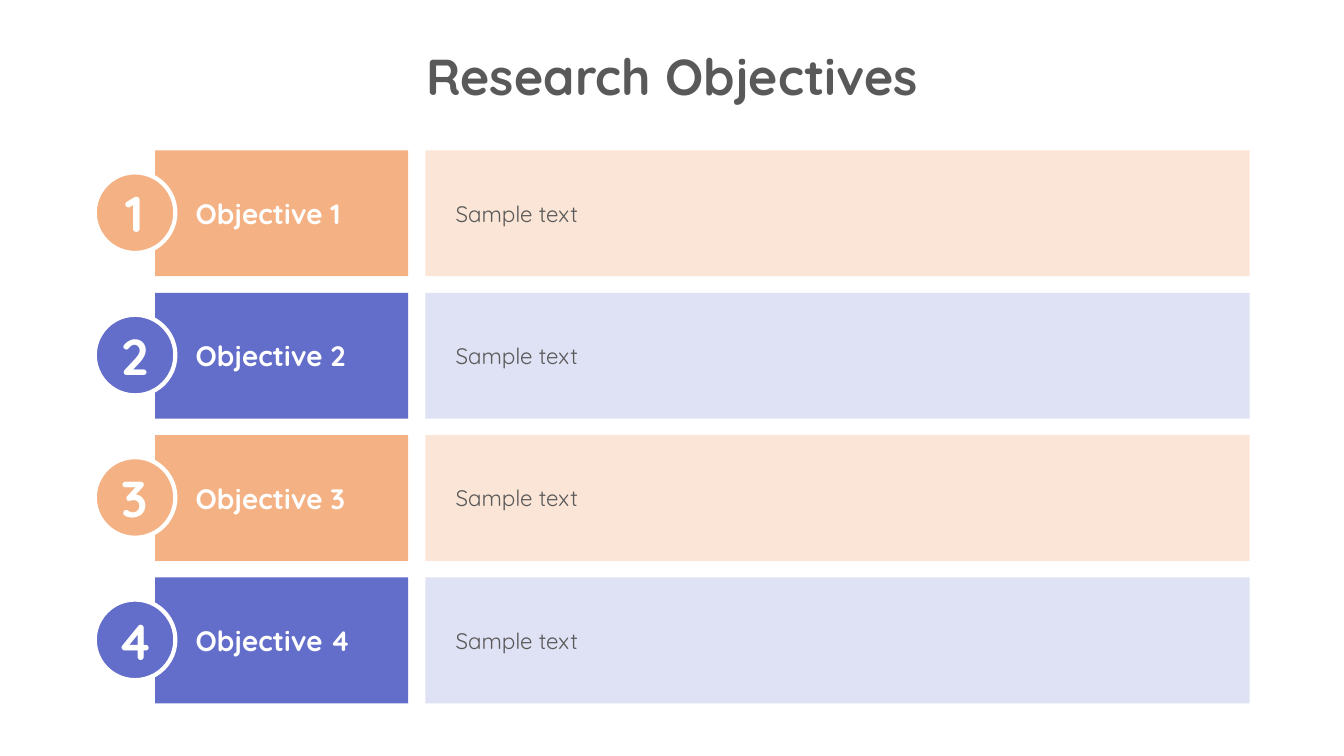
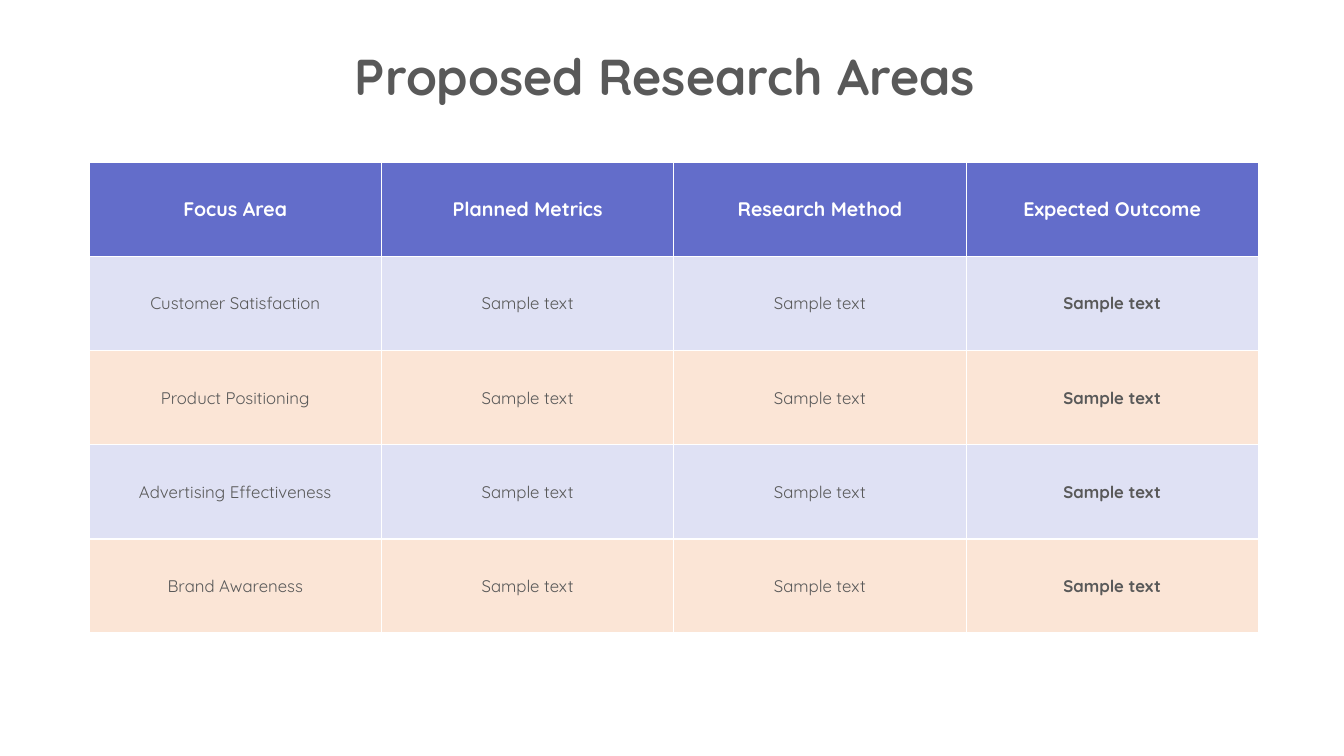
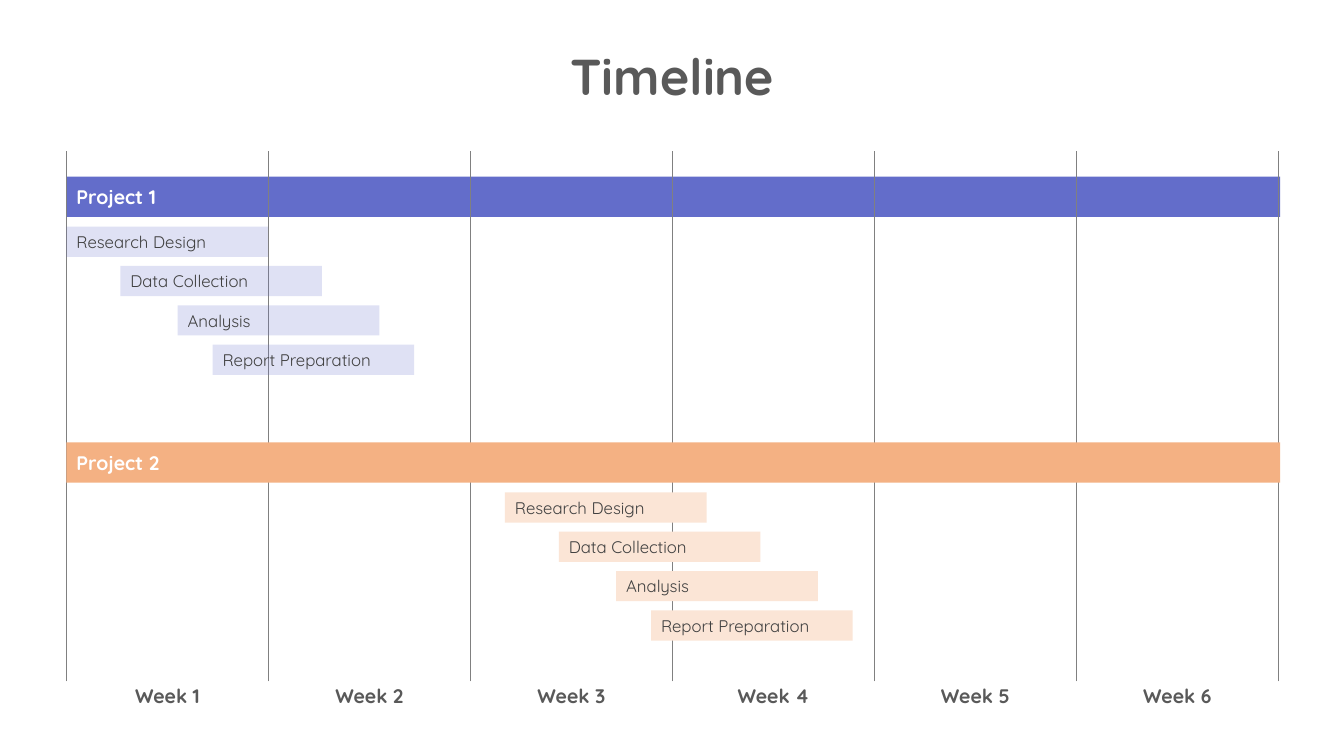
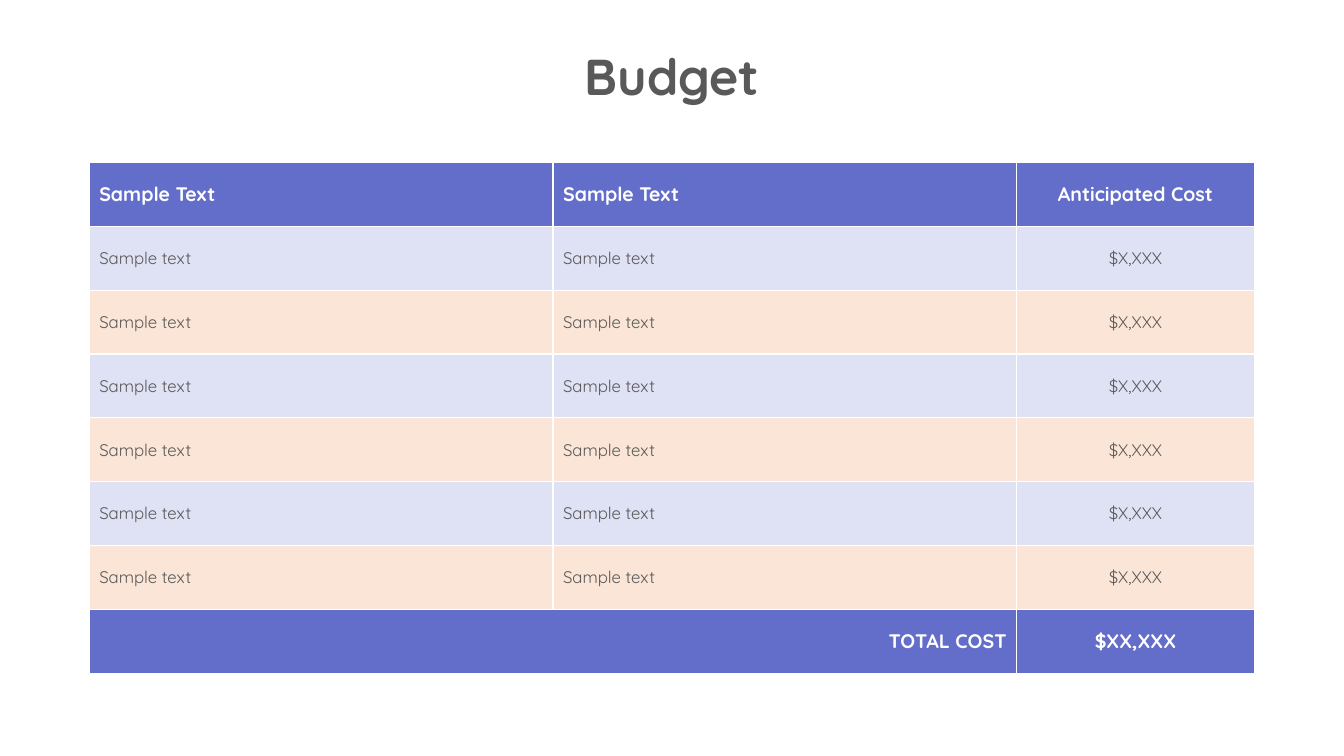
from dataclasses import dataclass

from lxml.etree import SubElement
from pptx import Presentation
from pptx.dml.color import RGBColor
from pptx.enum.shapes import MSO_CONNECTOR as Conn, MSO_SHAPE as Shape
from pptx.enum.text import MSO_ANCHOR as Anchor, MSO_AUTO_SIZE as AutoSize, PP_ALIGN as Align
from pptx.oxml.ns import qn
from pptx.util import Pt


@dataclass(frozen=True)
class Tone:
    rgb: str
    alpha: int = 100  # opacity in percent


@dataclass(frozen=True)
class Box:
    x: float
    y: float
    w: float
    h: float

    def place(self):
        return Pt(self.x), Pt(self.y), Pt(self.w), Pt(self.h)


@dataclass(frozen=True)
class Theme:
    font: str = "Quicksand"
    blue: Tone = Tone("636DCA")
    blue_tint: Tone = Tone("636DCA", 20)
    orange: Tone = Tone("F4B183")
    orange_tint: Tone = Tone("FBE5D6")
    white: str = "FFFFFF"
    text: str = "595959"
    task_text: str = "404040"
    rule: str = "808080"
    title_size: int = 36
    label_size: int = 20
    body_size: int = 16
    head_size: int = 14
    small_size: int = 12


T = Theme()
TITLE_BOX = Box(101.5, 28.8, 757.4, 51.1)


# Shared helpers
def rgb(value):
    return RGBColor.from_string(value)


def paint(fill, element, tone):
    """Fill a shape or cell; element is the XML that holds the fill."""
    fill.solid()
    fill.fore_color.rgb = rgb(tone.rgb)
    if tone.alpha < 100:
        clr = element.find(qn("a:solidFill")).find(qn("a:srgbClr"))
        SubElement(clr, qn("a:alpha"), val=str(tone.alpha * 1000))


def write(tf, text, size, color, bold=False, align=Align.LEFT):
    p = tf.paragraphs[0]
    p.alignment = align
    r = p.add_run()
    r.text = text
    r.font.name = T.font
    r.font.size = Pt(size)
    r.font.bold = bold
    r.font.color.rgb = rgb(color)


def add_block(slide, kind, box, tone, margins=(7.2, 3.6)):
    """Add a filled shape with no outline and return it."""
    sp = slide.shapes.add_shape(kind, *box.place())
    sp.shadow.inherit = False
    paint(sp.fill, sp.element.spPr, tone)
    sp.line.fill.background()
    tf = sp.text_frame
    tf.word_wrap = True
    tf.vertical_anchor = Anchor.MIDDLE
    tf.margin_left, tf.margin_right = Pt(margins[0]), Pt(margins[-1])
    tf.margin_top = tf.margin_bottom = Pt(3.6)
    return sp


def add_titled_slide(prs, title):
    slide = prs.slides.add_slide(prs.slide_layouts[5])
    sp = slide.shapes.title
    sp.left, sp.top, sp.width, sp.height = TITLE_BOX.place()
    tf = sp.text_frame
    tf.auto_size = AutoSize.NONE
    tf.word_wrap = True
    tf.vertical_anchor = Anchor.TOP
    write(tf, title, T.title_size, T.text, True, Align.CENTER)
    return slide


# Objectives
def add_objective(slide, box, number, tone, tint):
    """One row: label, description and a numbered badge over the label's edge."""
    label_x, label_w, gap, badge_d = 43.2, 180.7, 12.2, 57.6
    label = Box(box.x + label_x, box.y, label_w, box.h)
    body_x = label.x + label.w + gap
    body = Box(body_x, box.y, box.x + box.w - body_x, box.h)
    badge = Box(box.x, box.y + (box.h - badge_d) / 2 - 0.4, badge_d, badge_d)

    sp = add_block(slide, Shape.RECTANGLE, label, tone, (28.8, 7.2))
    write(sp.text_frame, f"Objective {number}", T.label_size, T.white, True)
    sp = add_block(slide, Shape.RECTANGLE, body, tint, (21.6, 21.6))
    write(sp.text_frame, "Sample text", T.body_size, T.text)
    sp = add_block(slide, Shape.OVAL, badge, tone, (0, 0))
    sp.line.color.rgb = rgb(T.white)
    sp.line.width = Pt(3)
    write(sp.text_frame, str(number), T.title_size, T.white, True, Align.CENTER)


def add_objectives(slide, box, count=4, row_h=89.9):
    tones = [(T.orange, T.orange_tint), (T.blue, T.blue_tint)]
    pitch = (box.h - row_h) / (count - 1)
    for i in range(count):
        row = Box(box.x, box.y + i * pitch, box.w, row_h)
        add_objective(slide, row, i + 1, *tones[i % 2])


# Tables
def set_borders(cell):
    tc_pr = cell._tc.get_or_add_tcPr()
    for i, side in enumerate(("lnL", "lnR", "lnT", "lnB")):
        ln = SubElement(tc_pr, qn(f"a:{side}"), w=str(Pt(1)))
        SubElement(SubElement(ln, qn("a:solidFill")), qn("a:srgbClr"), val=T.white)
        tc_pr.insert(i, ln)


def style_cell(cell, text, tone, strong, bold, align):
    paint(cell.fill, cell._tc.get_or_add_tcPr(), tone)
    set_borders(cell)
    cell.vertical_anchor = Anchor.MIDDLE
    if text:
        size, color = (T.head_size, T.white) if strong else (T.small_size, T.text)
        write(cell.text_frame, text, size, color, bold, align)


def add_banded_table(slide, box, widths, rows, aligns, bold_cols=(), total=False):
    """Blue header (and total) row, with blue and orange tints between."""
    tbl = slide.shapes.add_table(len(rows), len(widths), *box.place()).table
    tbl.first_row = tbl.horz_banding = False
    for col, width in zip(tbl.columns, widths):
        col.width = Pt(width)
    for i, row in enumerate(rows):
        tbl.rows[i].height = Pt(box.h / len(rows))
        strong = i == 0 or (total and i == len(rows) - 1)
        tone = T.blue if strong else (T.orange_tint, T.blue_tint)[i % 2]
        for j, text in enumerate(row):
            style_cell(tbl.cell(i, j), text, tone, strong, strong or j in bold_cols, aligns[j])
    return tbl


def add_research_areas(slide, box):
    areas = ["Customer Satisfaction", "Product Positioning",
             "Advertising Effectiveness", "Brand Awareness"]
    rows = [["Focus Area", "Planned Metrics", "Research Method", "Expected Outcome"]]
    rows += [[area] + ["Sample text"] * 3 for area in areas]
    add_banded_table(slide, box, [box.w / 4] * 4, rows, [Align.CENTER] * 4, bold_cols=(3,))


def add_budget(slide, box):
    rows = [["Sample Text", "Sample Text", "Anticipated Cost"]]
    rows += [["Sample text", "Sample text", "$X,XXX"]] * 6
    rows += [["TOTAL COST", "", "$XX,XXX"]]
    cost_w = 169.7
    item_w = (box.w - cost_w) / 2
    tbl = add_banded_table(slide, box, [item_w, item_w, cost_w], rows,
                           [Align.LEFT, Align.LEFT, Align.CENTER], total=True)
    total = tbl.cell(len(rows) - 1, 0)
    total.merge(tbl.cell(len(rows) - 1, 1))
    total.text_frame.paragraphs[0].alignment = Align.RIGHT


# Timeline
def add_weeks(slide, box, count=6, label_w=100):
    """Vertical week lines with a label centred under each column."""
    week_w = box.w / count
    bottom = box.y + box.h
    for i in range(count + 1):
        x = Pt(box.x + i * week_w)
        line = slide.shapes.add_connector(Conn.STRAIGHT, x, Pt(bottom), x, Pt(box.y))
        line.line.color.rgb = rgb(T.rule)
        line.line.width = Pt(0.5)
        SubElement(line.element.spPr, qn("a:effectLst"))
    for i in range(count):
        label = Box(box.x + (i + 0.5) * week_w - label_w / 2, bottom - 1.4, label_w, 24.5)
        tf = slide.shapes.add_textbox(*label.place()).text_frame
        tf.word_wrap = True
        write(tf, f"Week {i + 1}", T.head_size, T.text, True, Align.CENTER)


def add_project_band(slide, box, name, tone):
    sp = add_block(slide, Shape.RECTANGLE, box, tone)
    write(sp.text_frame, name, T.head_size, T.white, True)


def add_tasks(slide, band, start, tone):
    """Staggered tasks below a project band, the first one start points in."""
    tasks = [("Research Design", 0), ("Data Collection", 38.5),
             ("Analysis", 79.5), ("Report Preparation", 104.4)]
    for i, (name, delay) in enumerate(tasks):
        bar = Box(band.x + start + delay, band.y + 35.7 + i * 28.1, 144, 21.6)
        sp = add_block(slide, Shape.RECTANGLE, bar, tone)
        write(sp.text_frame, name, T.small_size, T.task_text)


def add_timeline(slide, box):
    first = Box(box.x, box.y + 18.2, box.w + 1.2, 28.8)
    second = Box(first.x, first.y + 189.8, first.w, first.h)
    # The week lines cross the first band and run behind everything else
    add_project_band(slide, first, "Project 1", T.blue)
    add_weeks(slide, box)
    add_tasks(slide, first, 0, T.blue_tint)
    add_project_band(slide, second, "Project 2", T.orange)
    add_tasks(slide, second, 313.2, T.orange_tint)


def main():
    prs = Presentation()
    prs.slide_width, prs.slide_height = Pt(960), Pt(540)
    pages = [
        ("Research Objectives", add_objectives, Box(67.7, 107.4, 825, 395)),
        ("Proposed Research Areas ", add_research_areas, Box(63.7, 116, 835.2, 336.2)),
        ("Timeline", add_timeline, Box(47.5, 108, 865.7, 378.7)),
        ("Budget", add_budget, Box(63.7, 116, 832.3, 365)),
    ]
    for title, build, box in pages:
        build(add_titled_slide(prs, title), box)
    prs.save("out.pptx")


if __name__ == "__main__":
    main()
